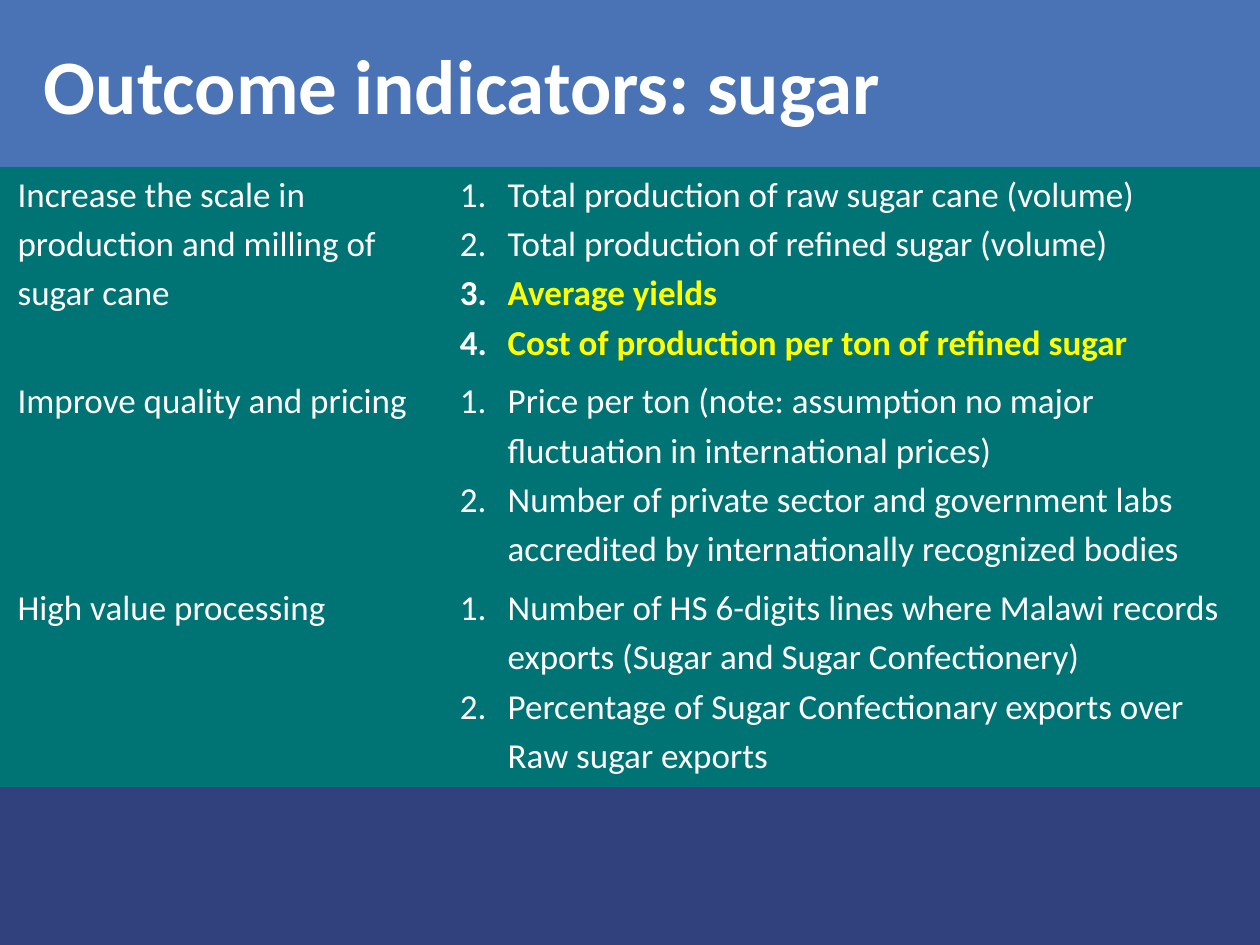
from pptx import Presentation
from pptx.dml.color import RGBColor
from pptx.enum.shapes import MSO_SHAPE as Shape
from pptx.oxml.ns import qn
from pptx.util import Inches, Pt
from lxml.etree import SubElement

NAVY = RGBColor(0x30, 0x41, 0x7E)
BLUE = RGBColor(0x4A, 0x73, 0xB5)
TEAL = RGBColor(0x00, 0x73, 0x74)
WHITE = RGBColor(0xFF, 0xFF, 0xFF)
YELLOW = RGBColor(0xFF, 0xFF, 0x00)
FONT = "Calibri"
PLAIN_GRID = "{2D5ABB26-0587-4C30-8999-92F81FD0307C}"

BAND_HEIGHT = 1.33
COLUMNS = (3.58, 6.42)
ROW_HEIGHT = 1.64

# Objective, its left margin and first-line indent, its indicators
ROWS = [
    ("Increase the scale in production and milling of sugar cane", 0.07, 0, [
        "Total production of raw sugar cane (volume)",
        "Total production of refined sugar (volume)",
        "Average yields",
        "Cost of production per ton of refined sugar",
    ]),
    ("Improve quality and pricing", 0.38, -0.31, [
        "Price per ton (note: assumption no major fluctuation in international prices)",
        "Number of private sector and government labs accredited by "
        "internationally recognized bodies",
    ]),
    ("High value processing", 0.38, -0.31, [
        "Number of HS 6-digits lines where Malawi records exports "
        "(Sugar and Sugar Confectionery)",
        "Percentage of Sugar Confectionary exports over Raw sugar exports",
    ]),
]
HIGHLIGHTED = {"Average yields", "Cost of production per ton of refined sugar"}


def add_span(para, text, size, color=WHITE, bold=False):
    span = para.add_run()
    span.text = text
    span.font.name = FONT
    span.font.size = Pt(size)
    span.font.bold = bold
    span.font.color.rgb = color


def format_para(para, margin, indent, numbered=False):
    props = para._p.get_or_add_pPr()
    props.set("marL", str(Inches(margin)))
    props.set("indent", str(Inches(indent)))
    if numbered:
        bullet_color = SubElement(props, qn("a:buClr"))
        SubElement(bullet_color, qn("a:srgbClr"), val=str(WHITE))
        SubElement(props, qn("a:buFont"), typeface="+mj-lt")
        SubElement(props, qn("a:buAutoNum"), type="arabicPeriod")
    tabs = SubElement(props, qn("a:tabLst"))
    SubElement(tabs, qn("a:tab"), pos=str(Inches(0.25)), algn="l")
    para.line_spacing = 1.15


def style_cell(cell):
    cell.fill.solid()
    cell.fill.fore_color.rgb = TEAL
    cell.margin_left = cell.margin_right = Inches(0.07)
    cell.margin_top = cell.margin_bottom = 0


def fill_indicators(cell, indicators):
    frame = cell.text_frame
    for index, text in enumerate(indicators):
        para = frame.add_paragraph() if index else frame.paragraphs[0]
        format_para(para, 0.38, -0.38, numbered=True)
        marked = text in HIGHLIGHTED
        add_span(para, text, 20, YELLOW if marked else WHITE, marked)


def add_indicator_table(page):
    frame = page.shapes.add_table(
        len(ROWS), len(COLUMNS), 0, Inches(BAND_HEIGHT),
        Inches(sum(COLUMNS)), Inches(ROW_HEIGHT * len(ROWS)))
    table = frame.table
    table.first_row = table.horz_banding = False
    table._tbl.tblPr.find(qn("a:tableStyleId")).text = PLAIN_GRID
    for column, width in zip(table.columns, COLUMNS):
        column.width = Inches(width)
    for row, (objective, margin, indent, indicators) in zip(table.rows, ROWS):
        row.height = Inches(ROW_HEIGHT)
        left, right = row.cells
        style_cell(left)
        style_cell(right)
        para = left.text_frame.paragraphs[0]
        format_para(para, margin, indent)
        add_span(para, objective, 20)
        fill_indicators(right, indicators)


def add_band(page, width):
    band = page.shapes.add_shape(Shape.RECTANGLE, 0, 0, width, Inches(BAND_HEIGHT))
    band.shadow.inherit = False
    band.fill.solid()
    band.fill.fore_color.rgb = BLUE
    band.line.fill.background()


def add_title(page, text):
    box = page.shapes.add_textbox(Inches(0.25), Inches(0.25), Inches(8.5), Inches(0.67))
    box.text_frame.word_wrap = True
    add_span(box.text_frame.paragraphs[0], text, 44, bold=True)


def main():
    deck = Presentation()
    deck.slide_width, deck.slide_height = Inches(10), Inches(7.5)
    page = deck.slides.add_slide(deck.slide_layouts[6])
    page.background.fill.solid()
    page.background.fill.fore_color.rgb = NAVY

    # Header band, indicator table, title
    add_band(page, deck.slide_width)
    add_indicator_table(page)
    add_title(page, "Outcome indicators: sugar")
    deck.save("out.pptx")


if __name__ == "__main__":
    main()
